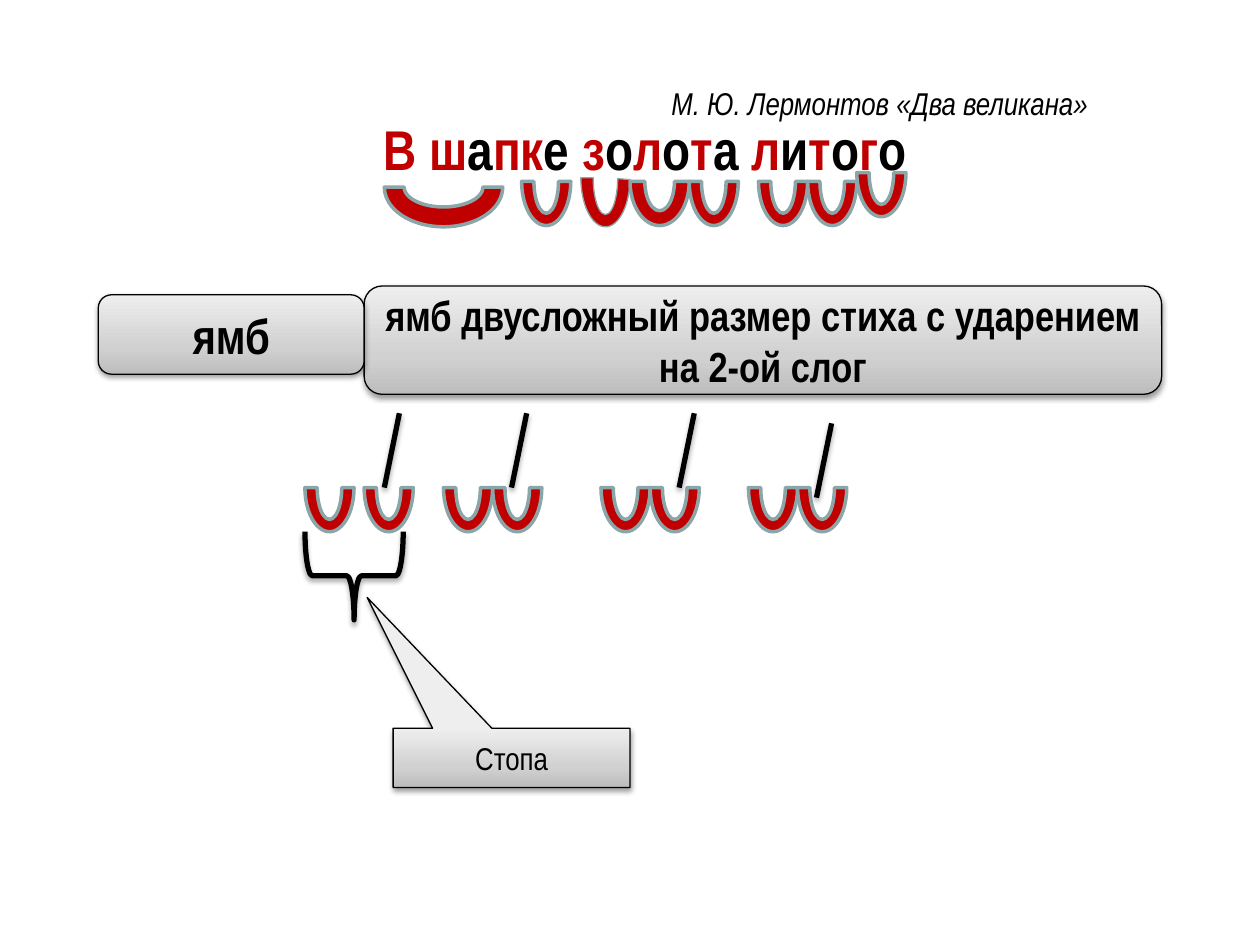
from collections import namedtuple
from dataclasses import dataclass

from pptx import Presentation, oxml
from pptx import util as u
from pptx.dml import color
from pptx.enum import shapes, text
from pptx.oxml import ns

Box = namedtuple("Box", "left top width height")


@dataclass(frozen=True)
class Theme:
    """Colours, font and type sizes of the slide."""
    font: str = "Arial Narrow"
    ink: str = "000000"
    accent: str = "C00000"
    arc_edge: str = "8AA6A8"
    panel: tuple = ((0, "BDBDBD"), (35, "D1D1D1"), (100, "EEEEEE"))
    verse_size: int = 32
    term_size: int = 28
    meaning_size: int = 24
    note_size: int = 18


THEME = Theme()
ARC_WIDTH, ARC_HEIGHT = 0.39, 0.7


def rgb(value):
    """Turn a hex string into a colour."""
    return color.RGBColor.from_string(value)


def inches(*values):
    """Convert several lengths to inches."""
    return [u.Inches(value) for value in values]


def set_line(shape, value, width):
    """Give a shape or connector a solid line."""
    shape.line.color.rgb = rgb(value)
    shape.line.width = u.Pt(width)


def add_shadow(shape, distance, opacity):
    """Add a soft shadow that falls straight down."""
    shape._element.spPr.append(oxml.parse_xml(
        f'<a:effectLst {ns.nsdecls("a")}>'
        f'<a:outerShdw blurRad="{u.Pt(3.1)}" dist="{u.Pt(distance)}" dir="5400000" rotWithShape="0">'
        f'<a:srgbClr val="{THEME.ink}"><a:alpha val="{opacity * 1000}"/></a:srgbClr>'
        '</a:outerShdw></a:effectLst>'))


def fill_gradient(shape):
    """Fill a panel with the grey gradient, dark at the bottom."""
    stops = "".join(f'<a:gs pos="{place * 1000}"><a:srgbClr val="{value}"/></a:gs>'
                    for place, value in THEME.panel)
    shape._element.spPr.append(oxml.parse_xml(
        f'<a:gradFill {ns.nsdecls("a")} rotWithShape="1"><a:gsLst>{stops}</a:gsLst>'
        '<a:lin ang="16200000" scaled="0"/></a:gradFill>'))


def style_span(span, size, value=THEME.ink, bold=False, italic=False):
    """Format one run of text."""
    span.font.name = THEME.font
    span.font.size = u.Pt(size)
    span.font.color.rgb = rgb(value)
    span.font.bold = bold
    span.font.italic = italic


def add_text_box(page, box):
    """Add a wrapping text box and return its first paragraph."""
    frame = page.shapes.add_textbox(*inches(*box)).text_frame
    frame.word_wrap = True
    frame.auto_size = text.MSO_AUTO_SIZE.SHAPE_TO_FIT_TEXT
    return frame.paragraphs[0]


def add_arc(page, box, edge=2):
    """Add one syllable arc that opens upwards."""
    arc = page.shapes.add_shape(shapes.MSO_SHAPE.BLOCK_ARC, *inches(*box))
    arc.rotation = 180
    arc.shadow.inherit = False
    arc.fill.solid()
    arc.fill.fore_color.rgb = rgb(THEME.accent)
    set_line(arc, THEME.arc_edge, edge)
    return arc


def add_panel(page, kind, box, wording, size, bold=False):
    """Add a grey panel with centred text."""
    panel = page.shapes.add_shape(kind, *inches(*box))
    fill_gradient(panel)
    set_line(panel, THEME.ink, 0.75)
    add_shadow(panel, 1.6, 38)
    frame = panel.text_frame
    frame.word_wrap = True
    frame.vertical_anchor = text.MSO_ANCHOR.MIDDLE
    para = frame.paragraphs[0]
    para.text = wording
    para.alignment = text.PP_ALIGN.CENTER
    style_span(para.runs[0], size, bold=bold)
    return panel


def add_verse(page, box):
    """Place the verse line with an arc under each syllable."""
    para = add_text_box(page, box)
    para.alignment = text.PP_ALIGN.CENTER
    for index, letters in enumerate("В ш|а|пк|е| з|о|л|о|т|а| л|и|т|о|г|о".split("|")):
        span = para.add_run()
        span.text = letters
        style_span(span, THEME.verse_size, THEME.ink if index % 2 else THEME.accent, bold=True)
    syllables = ((2.03, 0.31, 0.94, 0.63), (3.12, 0.23, ARC_WIDTH, ARC_HEIGHT),
                 (3.59, 0.16, ARC_WIDTH, 0.78), (3.98, 0.23, 0.47, ARC_HEIGHT),
                 (4.45, 0.23, ARC_WIDTH, ARC_HEIGHT), (5, 0.23, ARC_WIDTH, ARC_HEIGHT),
                 (5.39, 0.23, ARC_WIDTH, ARC_HEIGHT), (5.78, 0.16, ARC_WIDTH, ARC_HEIGHT))
    for index, (left, top, width, height) in enumerate(syllables):
        thin = index == 2
        arc = add_arc(page, Box(box.left + left, box.top + top, width, height), 0 if thin else 2)
        if thin:
            arc.adjustments[0] = 110.67


def add_foot_scheme(page, box):
    """Place four iambic feet, each with a stress stroke on its second arc."""
    feet = ((0, 0.47, 0.63, 0), (1.1, ARC_WIDTH, 1.64, 0),
            (2.35, ARC_WIDTH, 2.97, 0), (3.52, ARC_WIDTH, 4.06, 0.08))
    arc_top = box.top + 0.24
    for left, step, _, _ in feet:
        for offset in (left, left + step):
            add_arc(page, Box(box.left + offset, arc_top, ARC_WIDTH, ARC_HEIGHT))
    for _, _, foot, drop in feet:
        left, top = box.left + foot, box.top + drop
        stroke = page.shapes.add_connector(
            shapes.MSO_CONNECTOR.STRAIGHT, *inches(left + 0.12, top, left, top + 0.59))
        set_line(stroke, THEME.ink, 3)
        add_shadow(stroke, 1.8, 35)


def add_foot_label(page, box):
    """Place the brace under the first foot and the callout that names it."""
    brace = page.shapes.add_shape(
        shapes.MSO_SHAPE.RIGHT_BRACE, *inches(box.left + 0.04, box.top, 0.7, 0.78))
    brace.rotation = 90
    brace.fill.background()
    set_line(brace, THEME.ink, 3)
    add_shadow(brace, 1.8, 35)
    height = 0.47
    callout = add_panel(page, shapes.MSO_SHAPE.RECTANGULAR_CALLOUT,
                        Box(box.left + 0.7, box.top + box.height - height, 1.88, height),
                        "Стопа", THEME.note_size)
    callout.adjustments[0] = -0.61
    callout.adjustments[1] = -2.71


def add_definition(page, box):
    """Place the term and, to its right, its meaning."""
    term_width = 2.11
    rounded = shapes.MSO_SHAPE.ROUNDED_RECTANGLE
    add_panel(page, rounded,
              Box(box.left + term_width, box.top, box.width - term_width, box.height),
              "ямб двусложный размер стиха с ударением на 2-ой слог",
              THEME.meaning_size, bold=True)
    add_panel(page, rounded, Box(box.left, box.top + 0.07, term_width, 0.63),
              "ямб", THEME.term_size, bold=True)


def add_credit(page, box):
    """Place the author and title of the poem."""
    para = add_text_box(page, box)
    para.text = "М. Ю. Лермонтов «Два великана»"
    style_span(para.runs[0], THEME.note_size, italic=True)


def main():
    """Build the slide and save it."""
    deck = Presentation()
    deck.slide_width, deck.slide_height = inches(10, 7.5)
    page = deck.slides.add_slide(deck.slide_layouts[6])
    add_verse(page, Box(1.02, 0.86, 8.2, 0.64))
    add_foot_scheme(page, Box(2.42, 3.28, 4.3, 0.94))
    add_foot_label(page, Box(2.42, 4.18, 2.58, 2.07))
    add_definition(page, Box(0.78, 2.27, 8.44, 0.86))
    add_credit(page, Box(5.23, 0.62, 4.06, 0.4))
    deck.save("out.pptx")


if __name__ == "__main__":
    main()
